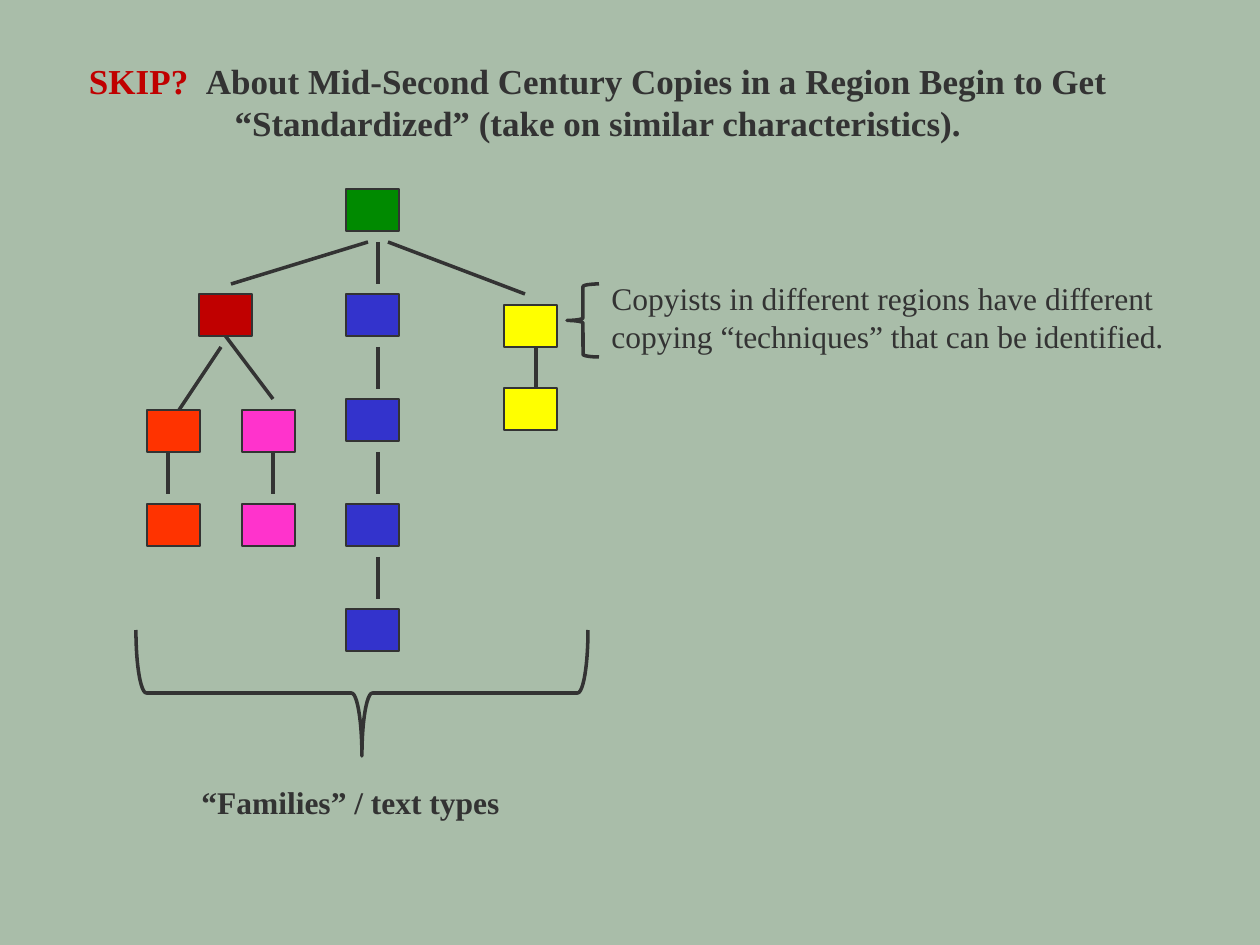
from dataclasses import dataclass

from pptx import Presentation
from pptx.dml.color import RGBColor
from pptx.enum.shapes import MSO_CONNECTOR as Connector, MSO_SHAPE as Shape
from pptx.enum.text import MSO_ANCHOR as Anchor, MSO_AUTO_SIZE as AutoSize, PP_ALIGN as Align
from pptx.oxml.ns import qn
from pptx.util import Pt
from lxml.etree import SubElement

EMU_PER_PX = 914400 / 126
BOTTOM_SIDE = 2


def px(*lengths):
    """Turn pixel lengths into EMU."""
    return [round(length * EMU_PER_PX) for length in lengths]


@dataclass(frozen=True)
class Theme:
    font: str = "Times New Roman"
    background: str = "A9BDA9"
    ink: str = "333333"
    alert: str = "C00000"
    title_size: int = 20
    body_size: int = 18
    box_line: float = 0.75
    branch_line: float = 2
    green: str = "008A00"
    red: str = "C00000"
    blue: str = "3333CC"
    yellow: str = "FFFF00"
    orange: str = "FF3300"
    pink: str = "FF33CC"


class FamilyTreeSlide:
    BOX_SIZE = (53, 42)

    def __init__(self, deck, theme):
        self.theme = theme
        self.slide = deck.slides.add_slide(deck.slide_layouts[5])
        fill = self.slide.background.fill
        fill.solid()
        fill.fore_color.rgb = RGBColor.from_string(theme.background)

    def ink_line(self, line, width):
        line.color.rgb = RGBColor.from_string(self.theme.ink)
        line.width = Pt(width)

    def set_text(self, holder, place, runs, size, bold=False, align=Align.LEFT):
        """Place a text holder and fill it with (text, colour) runs."""
        holder.left, holder.top, holder.width, holder.height = px(*place)
        frame = holder.text_frame
        frame_format = {
            "word_wrap": True,
            "auto_size": AutoSize.SHAPE_TO_FIT_TEXT,
            "vertical_anchor": Anchor.TOP,
        }
        for name, value in frame_format.items():
            setattr(frame, name, value)
        paragraph = frame.paragraphs[0]
        paragraph.alignment = align
        font_format = {"name": self.theme.font, "size": Pt(size), "bold": bold}
        for text, colour in runs:
            run = paragraph.add_run()
            run.text = text
            for name, value in font_format.items():
                setattr(run.font, name, value)
            run.font.color.rgb = RGBColor.from_string(colour)

    def title(self, place, runs):
        self.set_text(self.slide.shapes.title, place, runs,
                      self.theme.title_size, bold=True, align=Align.CENTER)

    def label(self, place, text, bold=False):
        holder = self.slide.shapes.add_textbox(*px(*place))
        self.set_text(holder, place, [(text, self.theme.ink)], self.theme.body_size, bold)

    def box(self, left, top, colour):
        box = self.slide.shapes.add_shape(Shape.RECTANGLE, *px(left, top, *self.BOX_SIZE))
        box.shadow.inherit = False
        box.fill.solid()
        box.fill.fore_color.rgb = RGBColor.from_string(colour)
        self.ink_line(box.line, self.theme.box_line)
        return box

    def branch(self, start_x, start_y, end_x, end_y, parent=None):
        """Draw a line, joined to the bottom of parent if one is given."""
        line = self.slide.shapes.add_connector(
            Connector.STRAIGHT, *px(start_x, start_y, end_x, end_y))
        if parent is not None:
            line.begin_connect(parent, BOTTOM_SIDE)
        self.ink_line(line.line, self.theme.branch_line)
        SubElement(line._element.spPr, qn("a:effectLst"))

    def brace(self, place, rotation=0):
        brace = self.slide.shapes.add_shape(Shape.LEFT_BRACE, *px(*place))
        brace.shadow.inherit = False
        brace.fill.background()
        brace.rotation = rotation
        brace.adjustments[0] = 0.083
        self.ink_line(brace.line, self.theme.branch_line)


def main():
    theme = Theme()
    deck = Presentation()
    deck.slide_width, deck.slide_height = px(1260, 945)
    tree = FamilyTreeSlide(deck, theme)

    tree.title((73, 53, 1050, 97), [
        ("SKIP?  ", theme.alert),
        ("About Mid-Second Century Copies in a Region Begin to Get "
         "“Standardized” (take on similar characteristics).", theme.ink),
    ])

    # Each family: column, colour and the tops of its copies
    families = [
        (346, theme.green, [189]),
        (346, theme.blue, range(294, 610, 105)),
        (504, theme.yellow, [305, 388]),
        (147, theme.orange, [410, 504]),
        (242, theme.pink, [410, 504]),
    ]
    for left, colour, tops in families:
        for top in tops:
            tree.box(left, top, colour)
    red_copy = tree.box(199, 294, theme.red)

    descents = [(378, top) for top in range(242, 558, 105)]
    descents += [(168, 452), (273, 452), (536, 347)]
    for x, top in descents:
        tree.branch(x, top, x, top + 42)
    tree.branch(368, 242, 231, 284)
    tree.branch(388, 242, 525, 294)
    tree.branch(221, 347, 179, 410)
    tree.branch(226, 336, 273, 399, parent=red_copy)

    tree.brace((299, 467, 126, 452), rotation=270)
    tree.label((189, 777, 347, 50), "“Families” / text types", bold=True)
    tree.brace((567, 284, 32, 73))
    tree.label((599, 273, 640, 89),
               "Copyists in different regions have different copying "
               "“techniques” that can be identified.")

    deck.save("out.pptx")


if __name__ == "__main__":
    main()
